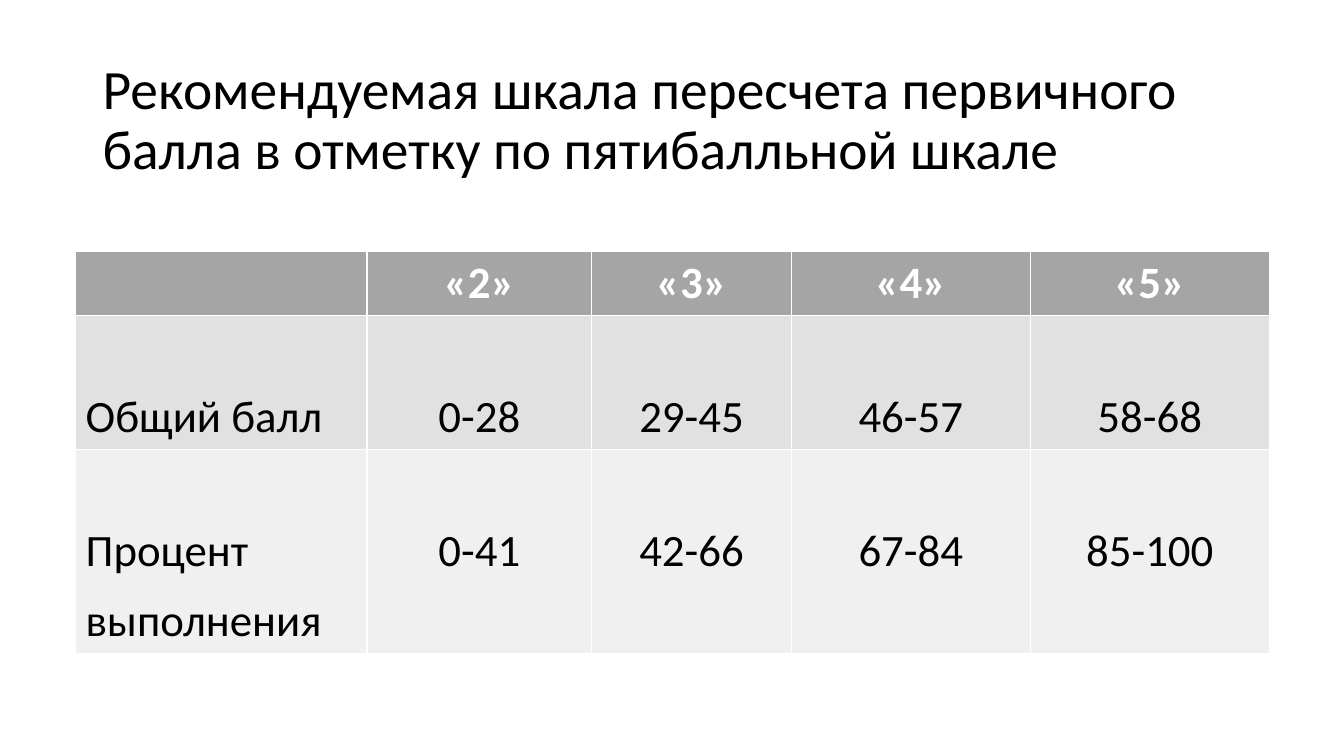
"""Builds a slide with the scale that turns raw scores into marks."""
from pptx import Presentation
from pptx.dml.color import RGBColor
from pptx.enum.text import MSO_ANCHOR, PP_ALIGN
from pptx.util import Inches, Pt

LEFT, CENTER = PP_ALIGN.LEFT, PP_ALIGN.CENTER
MIDDLE = MSO_ANCHOR.MIDDLE
BLACK = RGBColor(0x00, 0x00, 0x00)
WHITE = RGBColor(0xFF, 0xFF, 0xFF)
FILLS = [RGBColor(0xA5, 0xA5, 0xA5), RGBColor(0xE1, 0xE1, 0xE1), RGBColor(0xF0, 0xF0, 0xF0)]

COLS = [2.89, 2.23, 1.98, 2.37, 2.37]
ROWS = [0.64, 1.33, 2.02]
SCALE = [
    ["", "«2»", "«3»", "«4»", "«5»"],
    ["Общий балл", "0-28", "29-45", "46-57", "58-68"],
    ["Процент\nвыполнения", "0-41", "42-66", "67-84", "85-100"],
]


def write(frame, text, size=32, color=BLACK, bold=False, align=LEFT, line=1.0, gap=9.6):
    for i, part in enumerate(text.split("\n")):
        para = frame.add_paragraph() if i else frame.paragraphs[0]
        para.alignment = align
        para.line_spacing = line
        para.space_before = Pt(gap if i else 0)
        run = para.add_run()
        run.text = part
        font = run.font
        font.name = "Calibri"
        font.size = Pt(size)
        font.bold = bold
        font.color.rgb = color


deck = Presentation()
deck.slide_width, deck.slide_height = Inches(13.33), Inches(7.5)
slide = deck.slides.add_slide(deck.slide_layouts[6])

title = slide.shapes.add_textbox(Inches(0.92), Inches(0.48), Inches(11.5), Inches(1.45))
title.text_frame.word_wrap = True
title.text_frame.vertical_anchor = MIDDLE
write(title.text_frame, "Рекомендуемая шкала пересчета первичного балла в отметку по пятибалльной шкале",
      size=39.6, line=0.9)

table = slide.shapes.add_table(len(ROWS), len(COLS), Inches(0.75), Inches(2.49),
                               Inches(sum(COLS)), Inches(sum(ROWS))).table
for col, width in zip(table.columns, COLS):
    col.width = Inches(width)

for r, (row, high, texts) in enumerate(zip(table.rows, ROWS, SCALE)):
    row.height = Inches(high)
    head = r == 0
    for c, (cell, text) in enumerate(zip(row.cells, texts)):
        cell.fill.solid()
        cell.fill.fore_color.rgb = FILLS[r]
        cell.margin_top = Inches(0.05 if head else 0.73)
        if text:
            write(cell.text_frame, text, color=WHITE if head else BLACK, bold=head,
                  align=CENTER if c else LEFT, line=1.0 if head else 1.02)

deck.save("out.pptx")
